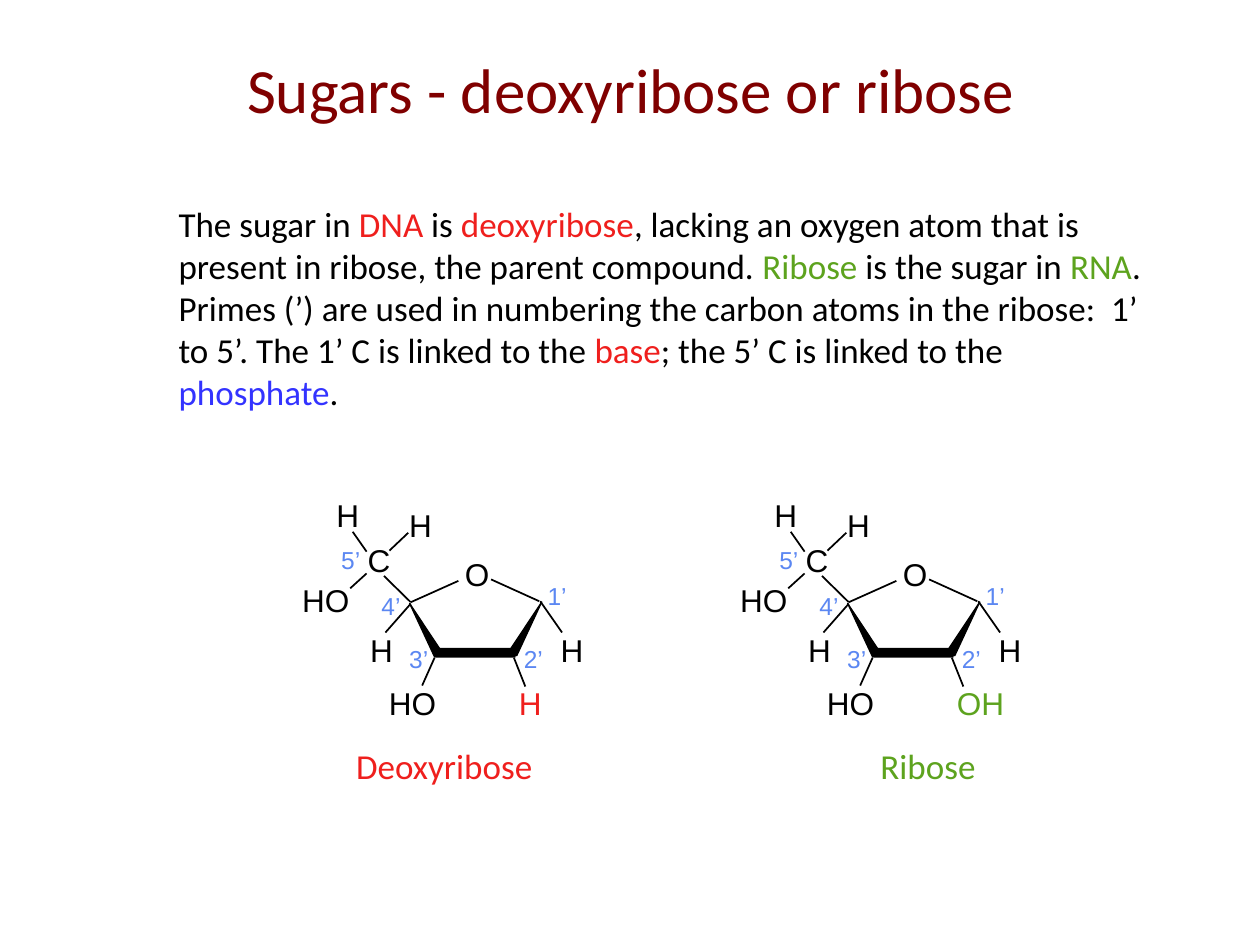
from lxml.etree import SubElement
from pptx import Presentation
from pptx.dml.color import RGBColor
from pptx.enum.shapes import MSO_CONNECTOR, MSO_SHAPE
from pptx.enum.text import MSO_ANCHOR, MSO_AUTO_SIZE, PP_ALIGN
from pptx.oxml.ns import qn
from pptx.util import Cm, Pt

COLORS = {
    "black": "000000",
    "maroon": "800000",
    "red": "EF1F1D",
    "green": "5DA31E",
    "blue": "3333FF",
    "prime": "5B87F2",
}
BODY = [
    [("The sugar in ", "black"), ("DNA", "red"), (" is ", "black"),
     ("deoxyribose", "red"),
     (", lacking an oxygen atom that is present in ribose, the parent compound. ", "black"),
     ("Ribose", "green"), (" is the sugar in ", "black"), ("RNA", "green"), (".", "black")],
    [("Primes (’) are used in numbering the carbon atoms in the ribose:  1’ to 5’. "
      "The 1’ C is linked to the ", "black"),
     ("base", "red"), ("; the 5’ C is linked to the ", "black"),
     ("phosphate", "blue"), (".", "black")],
]
BONDS = [
    (5.05, 2.24, 5.49, 2.87),
    (4.06, 1.8, 5.03, 2.24),
    (3.4, 1.83, 2.44, 2.26),
    (4.52, 3.38, 4.75, 3.96),
    (2.92, 3.38, 2.67, 3.94),
    (2.44, 2.29, 1.93, 2.87),
    (2.44, 2.26, 1.9, 1.73),
    (2.01, 1.22, 2.39, 0.86),
    (1.55, 1.24, 1.27, 0.84),
    (1.55, 1.68, 1.22, 1.98),
]
EDGE = [(4.5, 3.18), (4.57, 3.28), (4.55, 3.38), (2.95, 3.38), (2.92, 3.28), (3.02, 3.18)]
WEDGES = [(4.7, 2.18, 29.3), (2.62, 2.21, 330.7)]
ATOMS = [
    ("O", 3.28, 1.19), ("H", 5.21, 2.72), ("HO", 1.75, 3.78),
    ("H", 1.37, 2.72), ("C", 1.32, 0.91), ("H", 2.16, 0.2),
    ("H", 0.69, 0), ("HO", 0, 1.7),
]
PRIMES = [(4.95, 1.7), (4.47, 2.97), (2.16, 2.97), (1.6, 1.9), (0.79, 0.99)]
WIDTHS = {"H": 0.97, "C": 0.97, "O": 1.02, "HO": 1.47, "OH": 1.47}


def tint(name):
    """Return the named colour."""
    return RGBColor.from_string(COLORS[name])


def style(font, size, face, color):
    """Set size, typeface and colour of a font."""
    font.size, font.name = Pt(size), face
    font.color.rgb = tint(color)


def label(shapes, text, box, size, face, color):
    """Add a one-line text box."""
    frame = shapes.add_textbox(*map(Cm, box)).text_frame
    frame.word_wrap = False
    frame.auto_size = MSO_AUTO_SIZE.SHAPE_TO_FIT_TEXT
    frame.text = text
    style(frame.paragraphs[0].font, size, face, color)


def ink(shape):
    """Fill a shape with black and drop its shadow."""
    shape.shadow.inherit = False
    shape.fill.solid()
    shape.fill.fore_color.rgb = tint("black")


def bond(shapes, ends):
    """Draw a thin bond between two points."""
    line = shapes.add_connector(MSO_CONNECTOR.STRAIGHT, *map(Cm, ends))
    line.line.color.rgb = tint("black")
    line.line.width = Pt(1)
    SubElement(line._element.spPr, qn("a:effectLst"))


def title(slide, box):
    """Place and format the title."""
    head = slide.shapes.title
    head.left, head.top, head.width, head.height = map(Cm, box)
    frame = head.text_frame
    frame.text = "Sugars - deoxyribose or ribose"
    frame.vertical_anchor = MSO_ANCHOR.MIDDLE
    para = frame.paragraphs[0]
    para.alignment = PP_ALIGN.CENTER
    style(para.font, 36, "Calibri", "maroon")


def body(slide, box):
    """Add the explanation with its coloured terms."""
    frame = slide.shapes.add_textbox(*map(Cm, box)).text_frame
    frame.word_wrap = True
    for i, parts in enumerate(BODY):
        para = frame.add_paragraph() if i else frame.paragraphs[0]
        para.font.size, para.font.name = Pt(20), "Calibri"
        for text, color in parts:
            run = para.add_run()
            run.text = text
            run.font.color.rgb = tint(color)


def sugar(slide, left, top, group, color):
    """Draw a sugar ring whose 2’ carbon bears the given group."""
    shapes = slide.shapes.add_group_shape().shapes
    for x1, y1, x2, y2 in BONDS:
        bond(shapes, (left + x1, top + y1, left + x2, top + y2))
    points = [(Cm(left + x), Cm(top + y)) for x, y in EDGE]
    path = shapes.build_freeform(*points[0])
    path.add_line_segments(points[1:], close=True)
    edge = path.convert_to_shape()
    ink(edge)
    edge.line.fill.background()
    for x, y, angle in WEDGES:
        wedge = shapes.add_shape(MSO_SHAPE.FLOWCHART_EXTRACT, Cm(left + x), Cm(top + y),
                                 Cm(0.18), Cm(1.19))
        wedge.rotation = angle
        ink(wedge)
        wedge.line.color.rgb = tint("black")
        wedge.line.width = Pt(0.75)
    atoms = [(*atom, "black") for atom in ATOMS] + [(group, 4.37, 3.78, color)]
    for text, x, y, hue in atoms:
        label(shapes, text, (left + x, top + y, WIDTHS[text], 1.02), 18, "Arial", hue)
    for i, (x, y) in enumerate(PRIMES, 1):
        label(shapes, f"{i}’", (left + x, top + y, 0.89, 0.84), 14, "Arial", "prime")


def main():
    """Build and save the slide."""
    deck = Presentation()
    deck.slide_width, deck.slide_height = Cm(25.4), Cm(19.05)
    slide = deck.slides.add_slide(deck.slide_layouts[5])
    title(slide, (1.07, 0.2, 23.29, 3.18))
    body(slide, (3.35, 3.96, 20.37, 6.27))
    sugar(slide, 5.84, 9.88, "H", "red")
    sugar(slide, 14.67, 9.88, "OH", "green")
    label(slide.shapes, "Deoxyribose", (6.93, 14.88, 4.9, 1.12), 20, "Calibri", "red")
    label(slide.shapes, "Ribose", (17.5, 14.88, 2.84, 1.12), 20, "Calibri", "green")
    deck.save("out.pptx")


if __name__ == "__main__":
    main()
